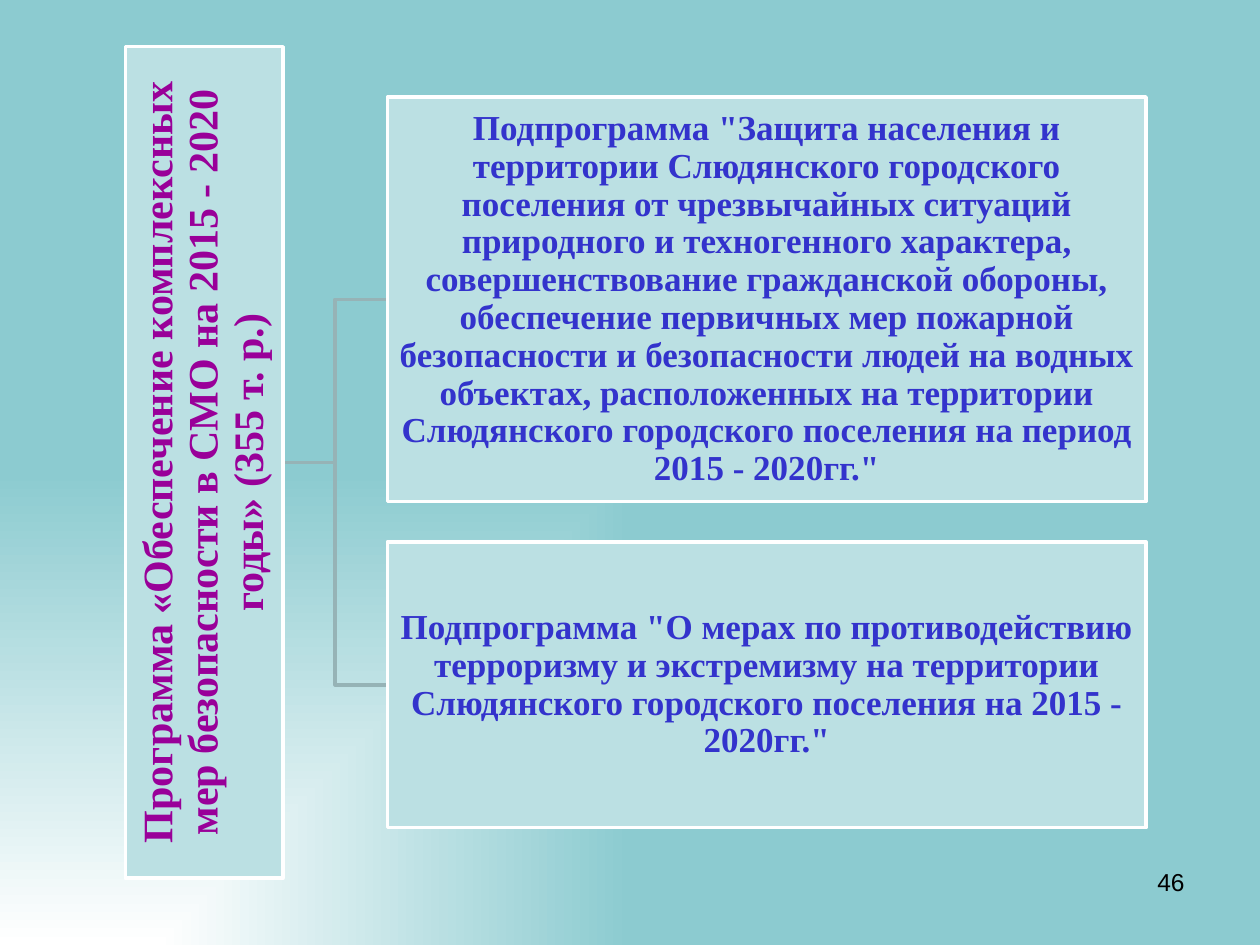
from dataclasses import dataclass

from lxml.etree import SubElement
from pptx import Presentation
from pptx.dml.color import RGBColor
from pptx.enum.shapes import MSO_SHAPE
from pptx.enum.text import MSO_ANCHOR, PP_ALIGN
from pptx.oxml.ns import qn
from pptx.util import Inches, Pt


@dataclass(frozen=True)
class Theme:
    glow: str = "FFFFFF"
    backdrop: str = "8CCBD0"
    panel: str = "BBE0E3"
    border: str = "FFFFFF"
    branch: str = "96B3B6"
    program: str = "990099"
    subprogram: str = "3333CC"
    number: str = "000000"
    serif: str = "Times New Roman"
    sans: str = "Arial"
    program_size: int = 24
    subprogram_size: int = 20
    number_size: int = 14
    line_width: int = 2


@dataclass(frozen=True)
class Box:
    left: float
    top: float
    width: float
    height: float

    @property
    def right(self):
        return self.left + self.width

    @property
    def middle(self):
        return self.top + self.height / 2

    def turned(self):
        center = self.left + self.width / 2
        return Box(center - self.height / 2, self.middle - self.width / 2,
                   self.height, self.width)

    def place(self):
        return [cells(value) for value in (self.left, self.top, self.width, self.height)]


THEME = Theme()
COLUMNS = 100
SLIDE_WIDTH = Inches(10)
SLIDE_HEIGHT = Inches(7.5)

PROGRAM = "Программа «Обеспечение комплексных мер безопасности в СМО на 2015 - 2020 годы» (355 т. р.)"
SUBPROGRAMS = [
    (32.1, 'Подпрограмма "Защита населения и территории Слюдянского городского поселения '
           'от чрезвычайных ситуаций природного и техногенного характера, '
           'совершенствование гражданской обороны, обеспечение первичных мер пожарной '
           'безопасности и безопасности людей на водных объектах, расположенных на '
           'территории Слюдянского городского поселения на период 2015 - 2020гг."'),
    (22.7, 'Подпрограмма "О мерах по противодействию терроризму и экстремизму на '
           'территории Слюдянского городского поселения на 2015 - 2020гг."'),
]


def cells(count):
    return round(SLIDE_WIDTH * count / COLUMNS)


def color(value):
    return RGBColor.from_string(value)


def write_text(shape, text, *, size, font, ink, bold=False, align=PP_ALIGN.CENTER,
               anchor=MSO_ANCHOR.MIDDLE, inset=None, spacing=None):
    frame = shape.text_frame
    frame.word_wrap = True
    frame.vertical_anchor = anchor
    if inset is not None:
        frame.margin_left = frame.margin_right = Inches(inset)
        frame.margin_top = frame.margin_bottom = Inches(inset)
    paragraph = frame.paragraphs[0]
    paragraph.alignment = align
    paragraph.line_spacing = spacing
    run = paragraph.add_run()
    run.text = text
    run.font.size = Pt(size)
    run.font.name = font
    run.font.bold = bold
    run.font.color.rgb = color(ink)


def paint_background(slide):
    fill = slide.background.fill
    fill.gradient()
    for stop, value in zip(fill.gradient_stops, (THEME.glow, THEME.backdrop)):
        stop.color.rgb = color(value)
    gradient = slide.background._cSld.find(".//" + qn("a:gradFill"))
    gradient.remove(gradient.find(qn("a:lin")))
    shade = SubElement(gradient, qn("a:path"), path="rect")
    SubElement(shade, qn("a:fillToRect"), t="100000", r="100000")


def add_panel(slide, box, text, rotation=0, **text_format):
    shape = slide.shapes.add_shape(MSO_SHAPE.RECTANGLE, *box.place())
    shape.rotation = rotation
    shape.shadow.inherit = False
    shape.fill.solid()
    shape.fill.fore_color.rgb = color(THEME.panel)
    shape.line.color.rgb = color(THEME.border)
    shape.line.width = Pt(THEME.line_width)
    write_text(shape, text, font=THEME.serif, bold=True, spacing=0.9, **text_format)


def add_branch(slide, parent, child):
    bend = (parent.right + child.left) / 2
    points = [(bend, parent.middle), (bend, child.middle), (child.left, child.middle)]
    builder = slide.shapes.build_freeform(cells(parent.right), cells(parent.middle))
    builder.add_line_segments([(cells(x), cells(y)) for x, y in points], close=False)
    shape = builder.convert_to_shape()
    shape.shadow.inherit = False
    shape.fill.background()
    shape.line.color.rgb = color(THEME.branch)
    shape.line.width = Pt(THEME.line_width)


def add_hierarchy(slide, box, root_width=12.5, indent=20.8, gap=3.2):
    root = Box(box.left, box.top, root_width, box.height)
    total = sum(height for height, _ in SUBPROGRAMS) + gap * (len(SUBPROGRAMS) - 1)
    top = box.middle - total / 2
    children = []
    for height, text in SUBPROGRAMS:
        children.append((Box(box.left + indent, top, box.width - indent, height), text))
        top += height + gap
    for child, _ in reversed(children):
        add_branch(slide, root, child)
    add_panel(slide, root.turned(), PROGRAM, rotation=270, size=THEME.program_size,
              ink=THEME.program, inset=0.02)
    for child, text in children:
        add_panel(slide, child, text, size=THEME.subprogram_size,
                  ink=THEME.subprogram, inset=0.01)


def add_page_number(slide, box):
    write_text(slide.shapes.add_textbox(*box.place()), "46", size=THEME.number_size,
               font=THEME.sans, ink=THEME.number, align=PP_ALIGN.RIGHT,
               anchor=MSO_ANCHOR.TOP)


def main():
    presentation = Presentation()
    presentation.slide_width = SLIDE_WIDTH
    presentation.slide_height = SLIDE_HEIGHT
    slide = presentation.slides.add_slide(presentation.slide_layouts[6])
    paint_background(slide)
    add_page_number(slide, Box(71.7, 68.3, 23.3, 5.2))
    add_hierarchy(slide, Box(9.95, 3.7, 81, 66))
    presentation.save("out.pptx")


if __name__ == "__main__":
    main()
